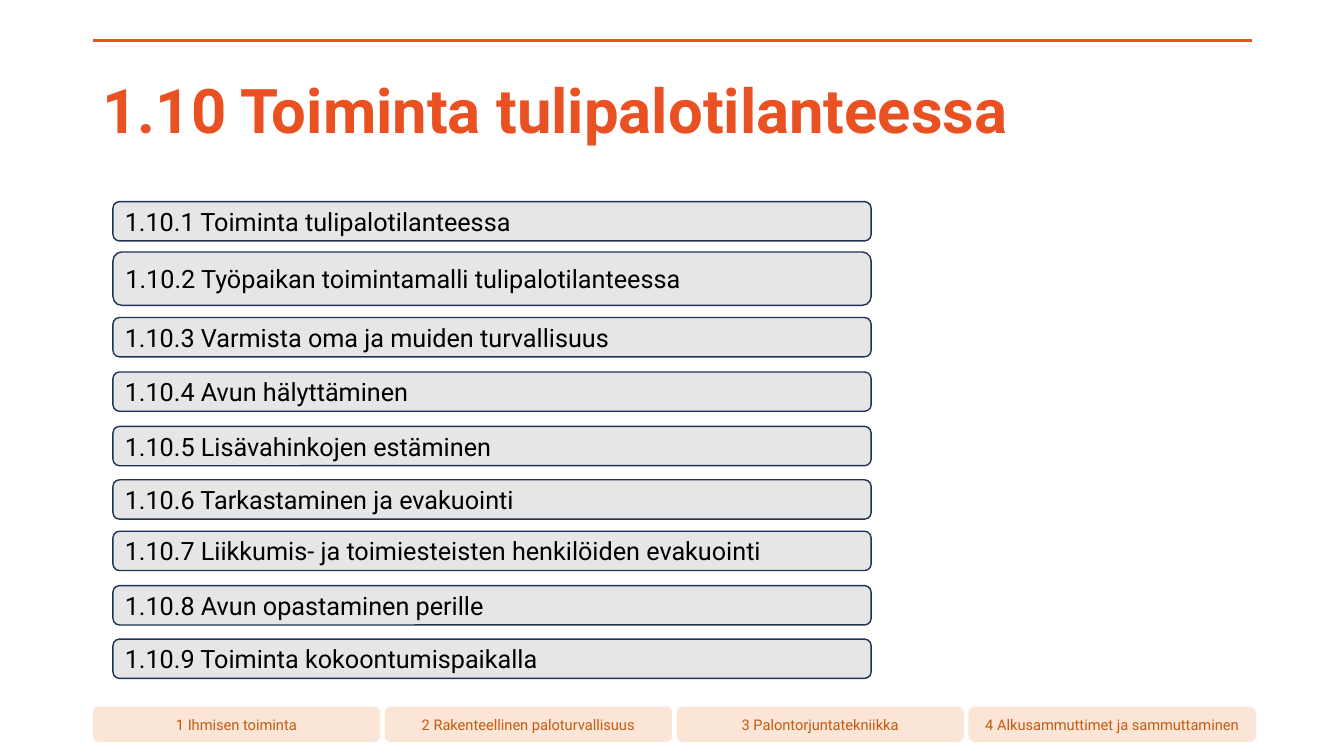
from dataclasses import dataclass

from pptx import Presentation
from pptx.dml.color import RGBColor as RGB
from pptx.enum.shapes import MSO_CONNECTOR as Link, MSO_SHAPE as Form
from pptx.enum.text import MSO_ANCHOR as Anchor, PP_ALIGN as Align
from pptx.oxml.ns import qn
from pptx.util import Inches, Pt
from lxml.etree import SubElement


@dataclass(frozen=True)
class Theme:
    face: str = "Roboto"
    accent: RGB = RGB(0xE9, 0x51, 0x23)
    tab: RGB = RGB(0xFB, 0xE5, 0xD6)
    tab_ink: RGB = RGB(0xC5, 0x5A, 0x11)
    card: RGB = RGB(0xE7, 0xE6, 0xE6)
    edge: RGB = RGB(0x1E, 0x32, 0x56)
    ink: RGB = RGB(0, 0, 0)
    head: float = 44
    body: float = 18
    small: float = 10.5


theme = Theme()
CELL = Inches(0.01)  # the slide is a grid of 1333 by 750 cells
LEFT, SPAN = 92, 1150


def write(shape, text, size, color, align=Align.LEFT):
    frame = shape.text_frame
    frame.word_wrap = True
    frame.vertical_anchor = Anchor.MIDDLE
    para = frame.paragraphs[0]
    para.text = text
    para.alignment = align
    para.font.name = theme.face
    para.font.size = Pt(size)
    para.font.color.rgb = color
    return para


def panel(left, top, width, height, fill):
    """Add a rounded box, measured in cells, without line or shadow."""
    spot = [round(n * CELL) for n in (left, top, width, height)]
    shape = slide.shapes.add_shape(Form.ROUNDED_RECTANGLE, *spot)
    shape.shadow.inherit = False
    shape.fill.solid()
    shape.fill.fore_color.rgb = fill
    shape.line.fill.background()
    return shape


deck = Presentation()
deck.slide_width, deck.slide_height = 1333 * CELL, 750 * CELL
slide = deck.slides.add_slide(deck.slide_layouts[6])

# Top rule
rule = slide.shapes.add_connector(
    Link.STRAIGHT, LEFT * CELL, 40 * CELL, (LEFT + SPAN) * CELL, 40 * CELL)
rule.line.color.rgb = theme.accent
rule.line.width = Pt(2.5)
SubElement(rule._element.spPr, qn("a:effectLst"))

# Chapter tabs
tabs = ["1 Ihmisen toiminta", "2 Rakenteellinen paloturvallisuus",
        "3 Palontorjuntatekniikka", "4 Alkusammuttimet ja sammuttaminen"]
for col, text in enumerate(tabs):
    tab = panel(LEFT + col * 289.5, 701, 285, 35, theme.tab)
    write(tab, text, theme.small, theme.tab_ink, Align.CENTER)

# Title
title = slide.shapes.add_textbox(LEFT * CELL, 40 * CELL, SPAN * CELL, 145 * CELL)
line = write(title, "1.10 Toiminta tulipalotilanteessa", theme.head, theme.accent)
line.font.bold = True
line.line_spacing = 0.9

# Topics: top, height, wording
topics = [
    (200, 39, "Toiminta tulipalotilanteessa"),
    (250, 53, "Työpaikan toimintamalli tulipalotilanteessa"),
    (315, 39, "Varmista oma ja muiden turvallisuus"),
    (369, 39, "Avun hälyttäminen"),
    (423, 39, "Lisävahinkojen estäminen"),
    (476, 39, "Tarkastaminen ja evakuointi"),
    (527, 39, "Liikkumis- ja toimiesteisten henkilöiden evakuointi"),
    (581, 39, "Avun opastaminen perille"),
    (634, 39, "Toiminta kokoontumispaikalla"),
]
for num, (top, height, text) in enumerate(topics, 1):
    card = panel(112, top, 752, height, theme.card)
    card.line.color.rgb = theme.edge
    card.line.width = Pt(1)
    write(card, f"1.10.{num} {text}", theme.body, theme.ink)

deck.save("out.pptx")
